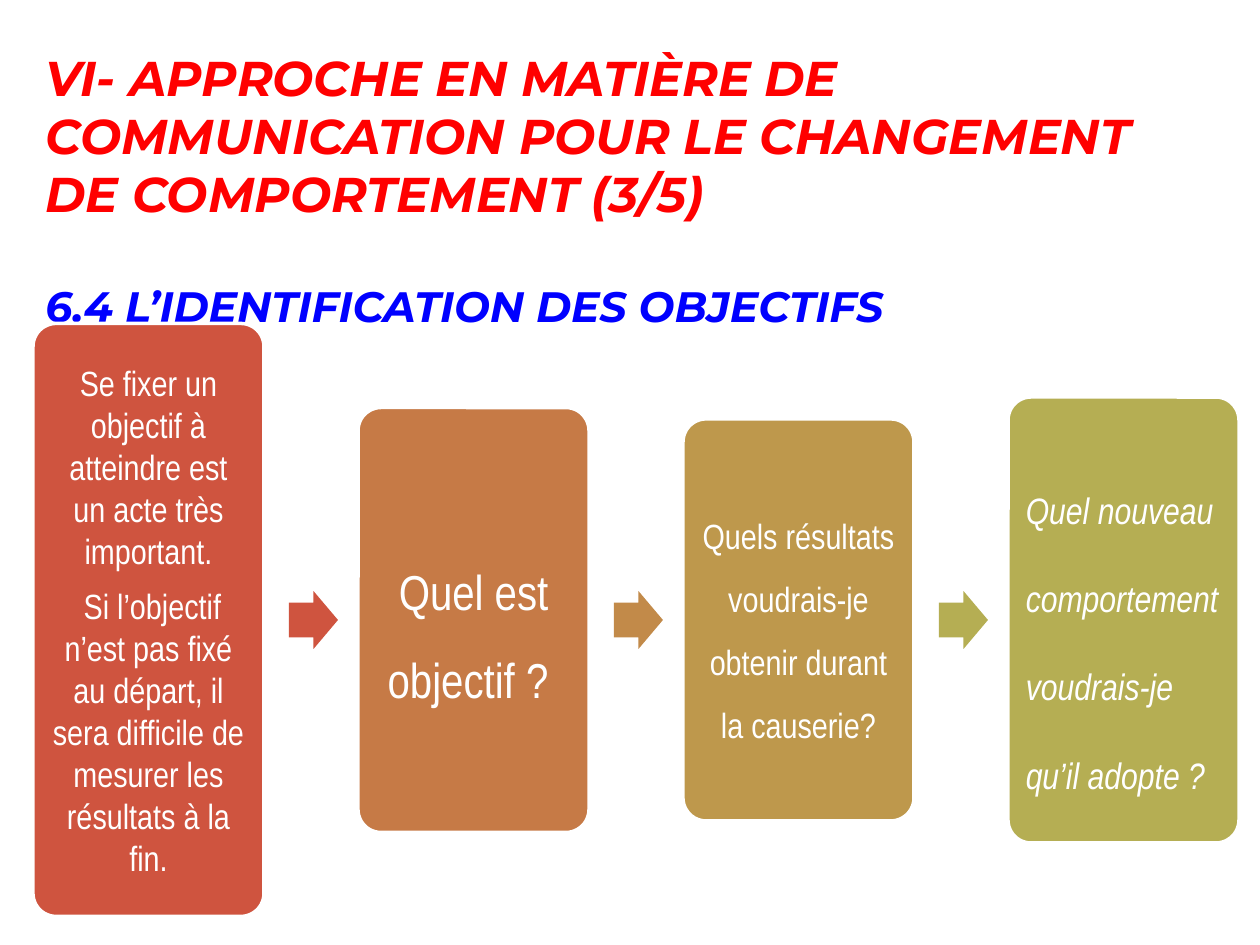
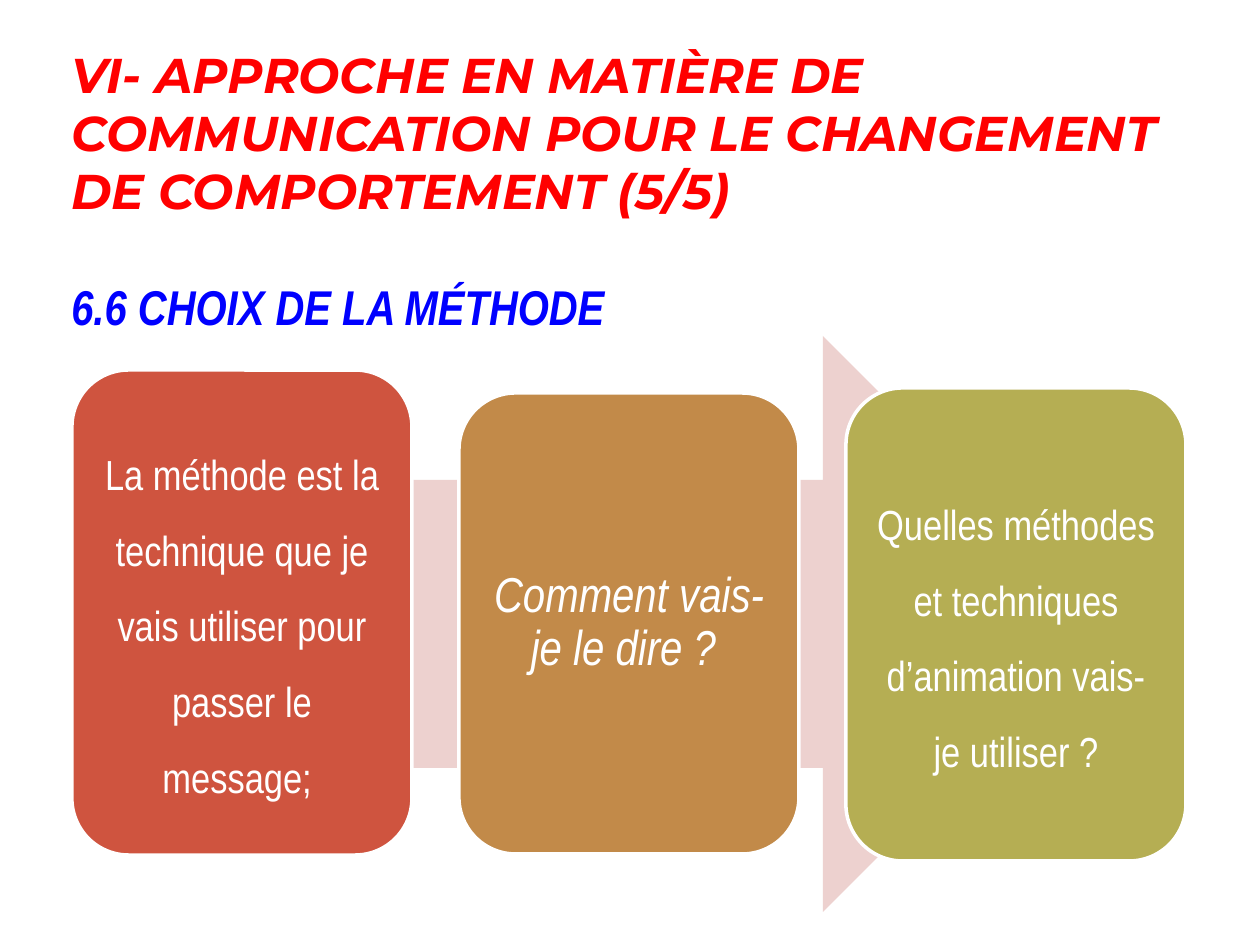
from pptx import Presentation
from pptx.dml.color import RGBColor
from pptx.enum.shapes import MSO_SHAPE as Preset
from pptx.enum.text import MSO_ANCHOR as Anchor, PP_ALIGN as Align
from pptx.util import Emu, Pt

PX = 914400 // 126
WHITE, RED, BLUE = "FFFFFF", "FF0000", "0000FF"
BRICK, COPPER, OCHRE, SAND, OLIVE, BLUSH = (
    "CF543F", "C67A46", "C28A49", "BE984C", "B5AE53", "EDD1CF")
TITLE_FONT, BODY_FONT = "Montserrat", "Arial Narrow"
TITLE = "VI- APPROCHE EN MATIÈRE DE COMMUNICATION POUR LE CHANGEMENT DE COMPORTEMENT"
TITLE_SIZE = 27.9


def px(length):
    return Emu(round(length * PX))


def color(hex_value):
    return RGBColor.from_string(hex_value)


def add_run(paragraph, text, font, size, hex_value, bold=False, italic=False):
    run = paragraph.add_run()
    run.text = text
    run.font.name = font
    run.font.size = Pt(size)
    run.font.bold = bold
    run.font.italic = italic
    run.font.color.rgb = color(hex_value)


def add_preset(slide, preset, box, fill):
    shape = slide.shapes.add_shape(preset, *map(px, box))
    shape.shadow.inherit = False
    shape.fill.solid()
    shape.fill.fore_color.rgb = color(fill)
    shape.line.fill.background()
    return shape


def add_title(slide, left, top, page, subtitle, gap, font, size):
    """Red chapter title with a blue section title under it."""
    frame = slide.shapes.add_textbox(*map(px, (left, top, 1138, 290))).text_frame
    frame.word_wrap = True
    frame.margin_top = frame.margin_bottom = 0
    heading, section = frame.paragraphs[0], frame.add_paragraph()
    for paragraph in (heading, section):
        paragraph.line_spacing = Pt(33.3)
    section.space_before = px(gap)
    add_run(heading, f"{TITLE} ({page})", TITLE_FONT, TITLE_SIZE, RED, True, True)
    add_run(section, subtitle, font, size, BLUE, True, True)


def add_card(slide, box, fill, texts, size, spacing, corner,
             italic=False, align=Align.CENTER):
    """Rounded card whose margins and paragraph gaps follow the text size."""
    card = add_preset(slide, Preset.ROUNDED_RECTANGLE, box, fill)
    card.adjustments[0] = corner
    card.line.color.rgb = color(WHITE)
    card.line.width = Pt(2)
    frame = card.text_frame
    frame.word_wrap = True
    frame.vertical_anchor = Anchor.MIDDLE
    margin = Pt(size * 0.3)
    frame.margin_left = frame.margin_right = margin
    frame.margin_top = frame.margin_bottom = margin
    for index, text in enumerate(texts):
        paragraph = frame.add_paragraph() if index else frame.paragraphs[0]
        paragraph.alignment = align
        paragraph.line_spacing = spacing
        paragraph.space_after = Pt(size * 0.35)
        add_run(paragraph, text, BODY_FONT, size, WHITE, italic=italic)


def add_steps(slide, left, middle):
    """Four cards on one axis, joined by block arrows."""
    width, step, arrow_width, arrow_height = 231, 325, 49, 58
    steps = [
        (593, BRICK, ["Se fixer un objectif à atteindre est un acte très important.",
                      " Si l’objectif n’est pas fixé au départ, il sera difficile de "
                      "mesurer les résultats à la fin."], 20, 1.0, {}),
        (425, COPPER, ["Quel est objectif ? "], 28, 1.5, {}),
        (402, SAND, ["Quels résultats voudrais-je obtenir durant la causerie?"],
         20, 1.5, {}),
        (446, OLIVE, ["Quel nouveau comportement voudrais-je qu’il adopte ?"],
         21, 2.0, {"italic": True, "align": Align.LEFT}),
    ]
    for index, (height, fill, texts, size, spacing, style) in enumerate(steps):
        box = (left + index * step, middle - height / 2, width, height)
        add_card(slide, box, fill, texts, size, spacing, 0.1, **style)
    for index, fill in enumerate((BRICK, OCHRE, OLIVE)):
        box = (left + index * step + 256, middle - arrow_height / 2,
               arrow_width, arrow_height)
        arrow = add_preset(slide, Preset.RIGHT_ARROW, box, fill)
        arrow.adjustments[0] = 0.6


def add_process(slide, left, top):
    """Three cards over one wide pale arrow."""
    width, step = 340, 387
    add_preset(slide, Preset.RIGHT_ARROW, (left + 75, top, 964, 576), BLUSH)
    cards = [
        (34, 485, BRICK, "La méthode est la technique que je vais utiliser pour "
                         "passer le message;\u00a0", 24, 1.5, False),
        (57, 461, OCHRE, "Comment vais-je le dire ? ", 28, 0.9, True),
        (52, 473, OLIVE, "Quelles méthodes et techniques d’animation vais-je "
                         "utiliser ?", 24, 1.5, False),
    ]
    for index, (offset, height, fill, text, size, spacing, italic) in enumerate(cards):
        box = (left + index * step, top + offset, width, height)
        add_card(slide, box, fill, [text], size, spacing, 0.1667, italic)


def main():
    presentation = Presentation()
    presentation.slide_width, presentation.slide_height = px(1260), px(945)
    blank = presentation.slide_layouts[6]

    # Objectives
    slide = presentation.slides.add_slide(blank)
    add_title(slide, 33, 48, "3/5", "6.4 L’IDENTIFICATION DES OBJECTIFS",
              50, TITLE_FONT, 24.3)
    add_steps(slide, 33, 620)

    # Method
    slide = presentation.slides.add_slide(blank)
    add_title(slide, 59, 45, "5/5", "6.6 CHOIX DE LA MÉTHODE",
              57, BODY_FONT, TITLE_SIZE)
    add_process(slide, 72, 336)

    presentation.save("out.pptx")


if __name__ == "__main__":
    main()
